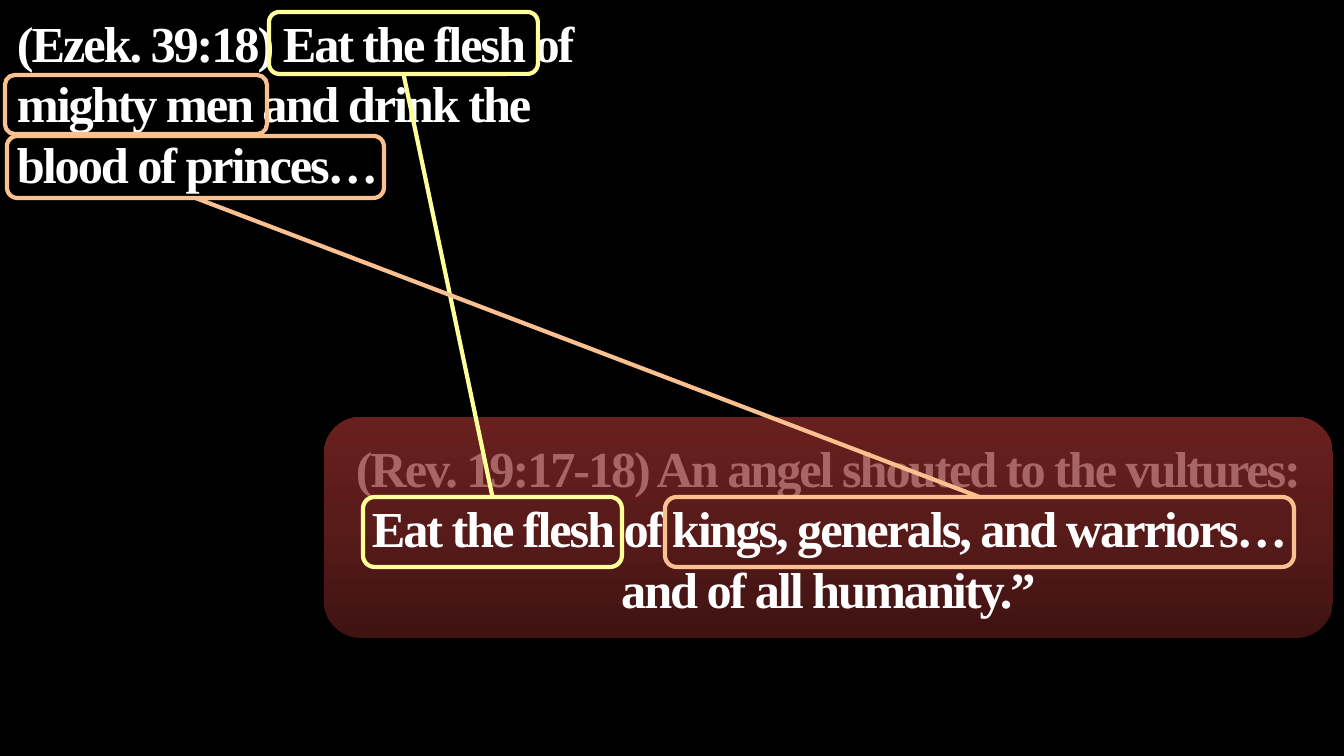
from copy import deepcopy
from lxml.etree import SubElement
from pptx import Presentation
from pptx.dml.color import RGBColor
from pptx.enum.shapes import MSO_CONNECTOR as Connector, MSO_SHAPE as Shape
from pptx.enum.text import MSO_ANCHOR as Anchor, PP_ALIGN as Align
from pptx.oxml.ns import qn
from pptx.util import Emu, Pt

BLACK = RGBColor(0x00, 0x00, 0x00)
WHITE = RGBColor(0xFF, 0xFF, 0xFF)
ROSE = RGBColor(0xA7, 0x65, 0x65)
YELLOW = RGBColor(0xFF, 0xFF, 0x99)
PEACH = RGBColor(0xFA, 0xC0, 0x90)
PANEL_STOPS = [(0, RGBColor(0x3E, 0x13, 0x12)),
               (0.5, RGBColor(0x58, 0x1B, 0x1A)),
               (1, RGBColor(0x68, 0x20, 0x1E))]

# Content: lengths in px, boxes as left, top, width, height
SLIDE_SIZE = (1344, 756)
EZEKIEL_BOX = (7, 7, 632, 194)
EZEKIEL = [("(Ezek. 39:18) Eat the flesh of mighty men and drink the "
            "blood of princes…", WHITE)]
REVELATION_BOX = (324, 417, 1009, 221)
REVELATION = [
    ("(Rev. 19:17-18) An angel shouted to the vultures:", ROSE),
    ("Eat the flesh of kings, generals, and warriors… and of all humanity.”", WHITE),
]
# Matching phrases: colour, Ezekiel frame, Revelation frame
PARALLELS = [
    (YELLOW, (269, 12, 269, 62), (363, 497, 259, 70)),
    (PEACH, (7, 136, 377, 62), (665, 497, 629, 70)),
]
MIGHTY_MEN = (5, 75, 262, 59)


def px(length):
    return Emu(round(length * 914400 / 100.8))


def emu(box):
    return [px(length) for length in box]


def write(frame, lines, align):
    frame.word_wrap = True
    for index, (text, color) in enumerate(lines):
        para = frame.add_paragraph() if index else frame.paragraphs[0]
        para.alignment = align
        span = para.add_run()
        span.text = text
        span.font.name = "Times New Roman"
        span.font.size = Pt(36)
        span.font.bold = True
        span.font.color.rgb = color
        span.font._element.set("spc", "-150")


def add_rounded(box):
    shape = page.shapes.add_shape(Shape.ROUNDED_RECTANGLE, *emu(box))
    shape.shadow.inherit = False
    return shape


def add_frame(box, color):
    frame = add_rounded(box)
    frame.fill.background()
    frame.line.color.rgb = color
    frame.line.width = Pt(3)
    return frame


def join(lower, upper, color):
    link = page.shapes.add_connector(Connector.STRAIGHT, 0, 0, 0, 0)
    link.begin_connect(lower, 0)
    link.end_connect(upper, 2)
    link.line.color.rgb = color
    link.line.width = Pt(3)
    SubElement(link._element.spPr, qn("a:effectLst"))


deck = Presentation()
deck.slide_width, deck.slide_height = emu(SLIDE_SIZE)
page = deck.slides.add_slide(deck.slide_layouts[6])
page.background.fill.solid()
page.background.fill.fore_color.rgb = BLACK

# Ezekiel verse
verse = page.shapes.add_textbox(*emu(EZEKIEL_BOX))
write(verse.text_frame, EZEKIEL, Align.LEFT)

# Revelation panel, dark at the bottom
panel = add_rounded(REVELATION_BOX)
panel.line.fill.background()
panel.fill.gradient()
panel.fill.gradient_angle = 90
stop_list = panel._element.spPr.find(qn("a:gradFill")).find(qn("a:gsLst"))
stop_list.insert(1, deepcopy(stop_list[0]))
for stop, (position, color) in zip(panel.fill.gradient_stops, PANEL_STOPS):
    stop.position = position
    stop.color.rgb = color
panel.text_frame.vertical_anchor = Anchor.MIDDLE
write(panel.text_frame, REVELATION, Align.CENTER)

# Framed phrases and the lines between them
for color, ezekiel_box, revelation_box in PARALLELS:
    upper = add_frame(ezekiel_box, color)
    lower = add_frame(revelation_box, color)
    join(lower, upper, color)
add_frame(MIGHTY_MEN, PEACH)

deck.save("out.pptx")
